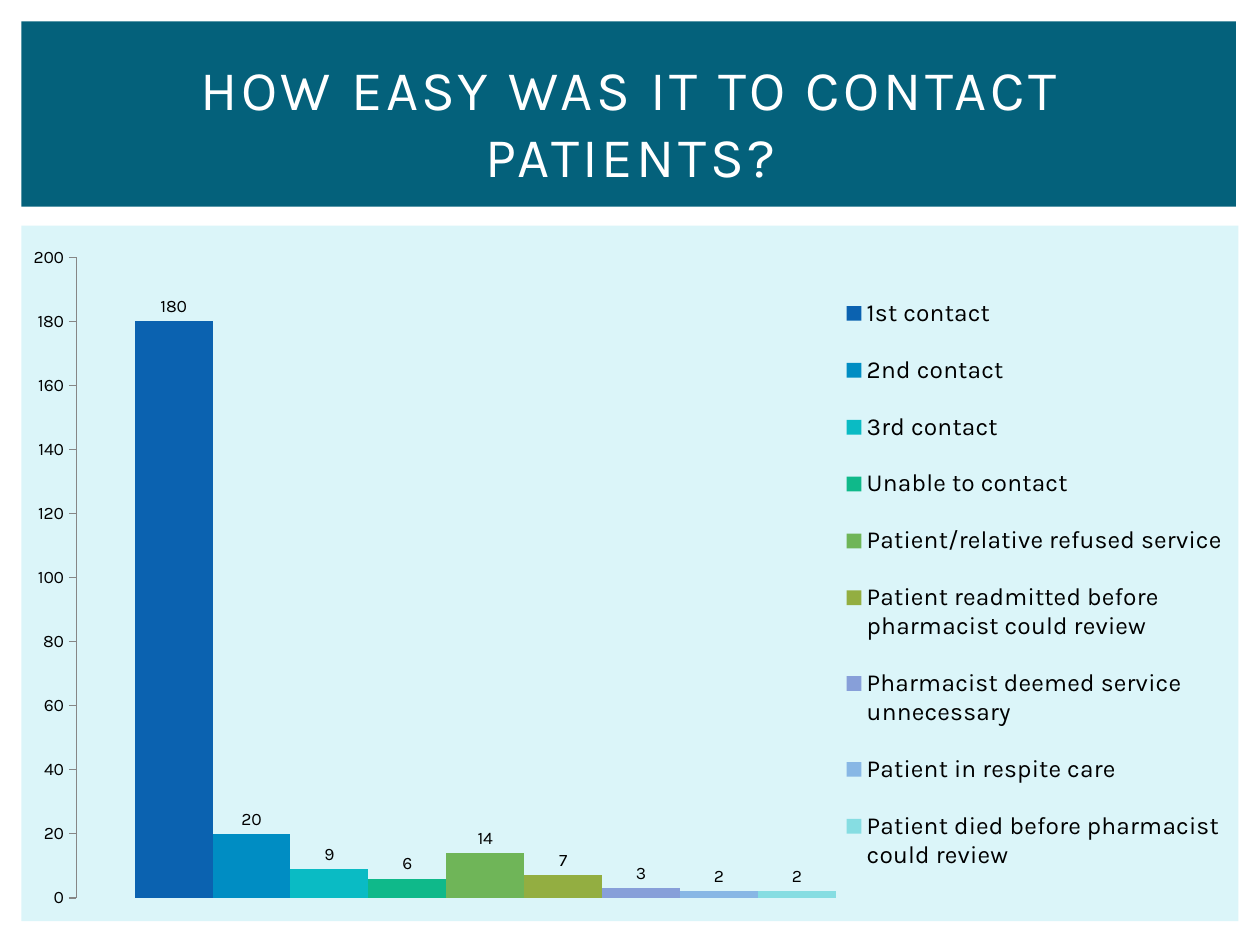
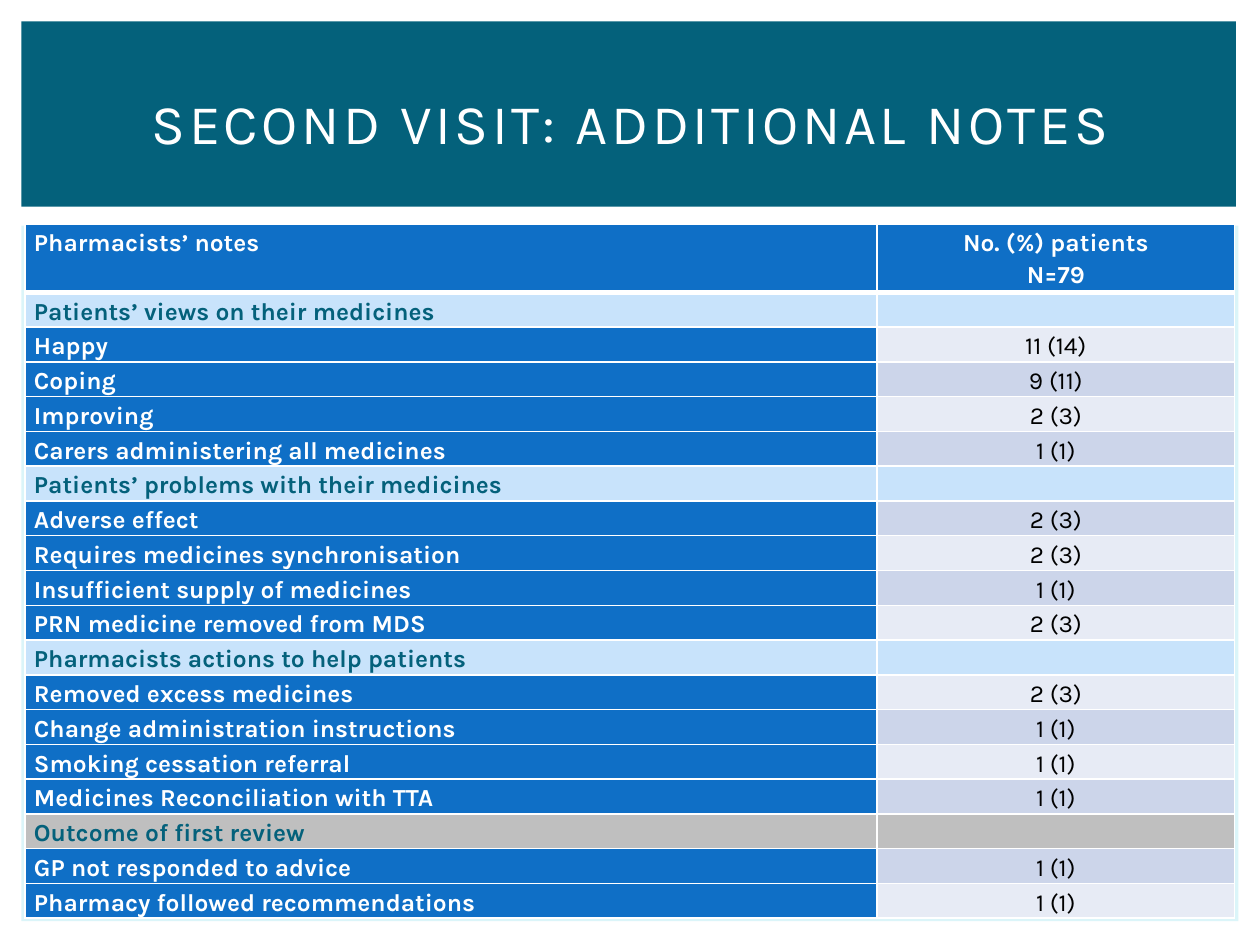
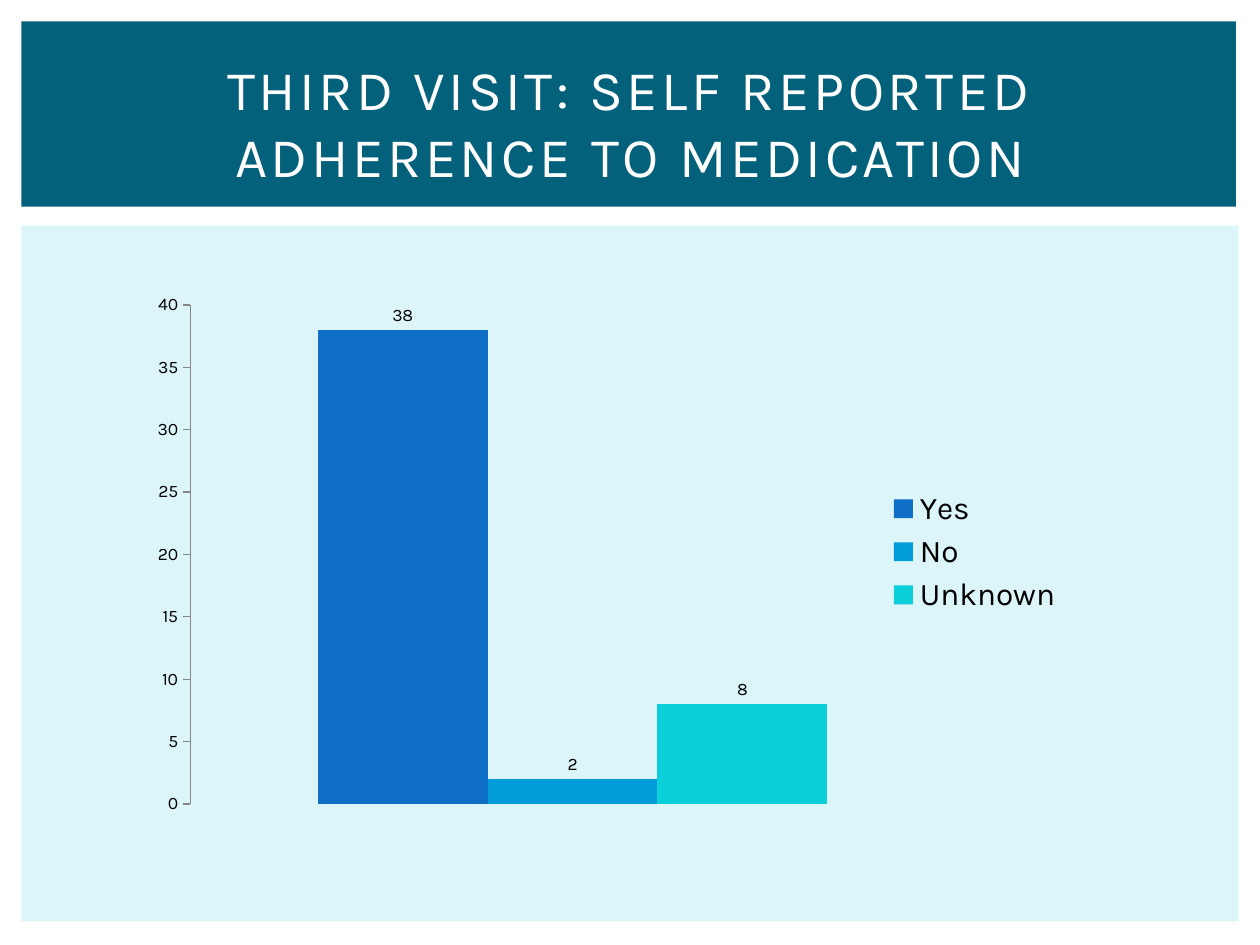
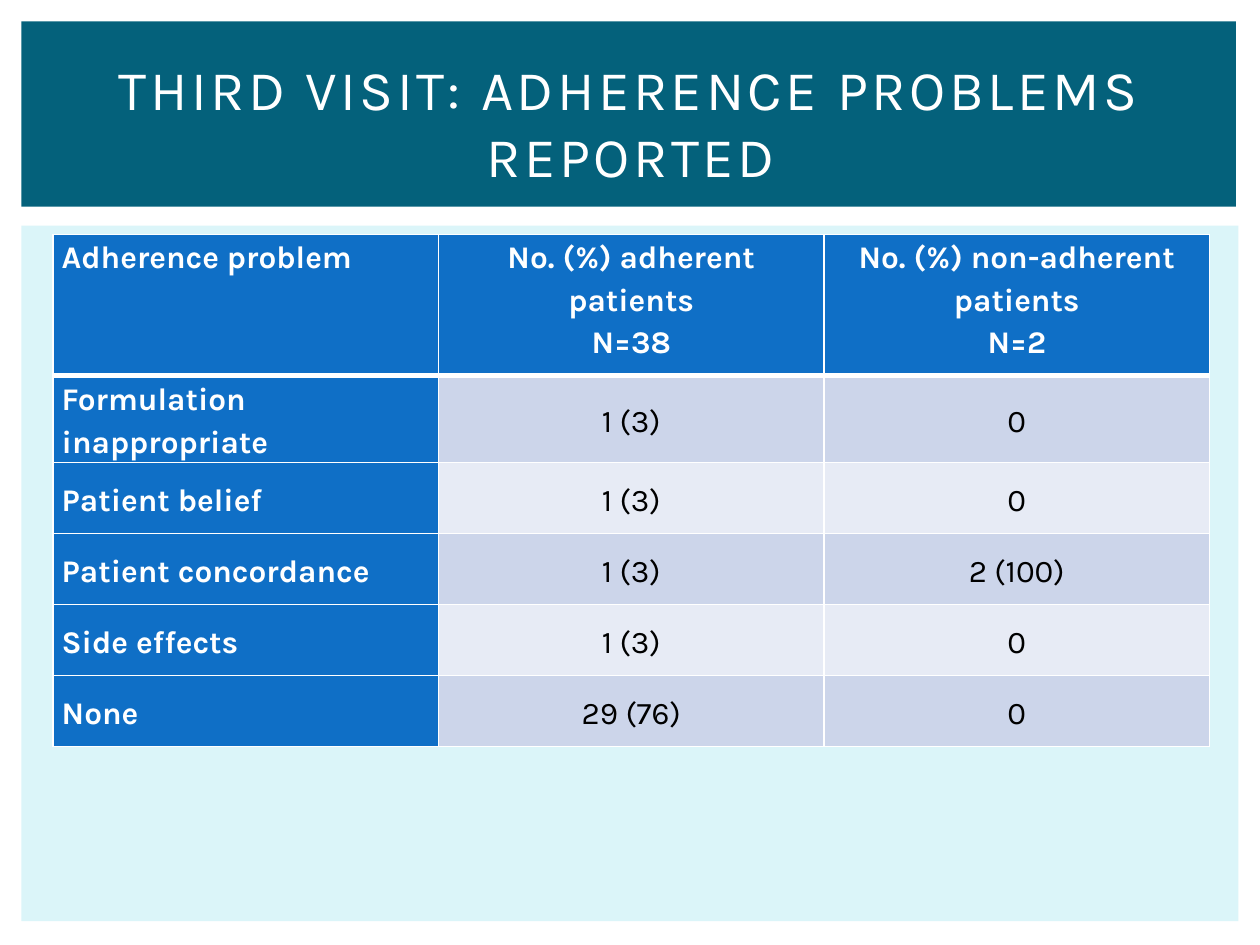
from lxml.etree import SubElement as Sub
from pptx import Presentation
from pptx.chart.data import CategoryChartData as Data
from pptx.dml.color import RGBColor as Rgb
from pptx.enum.chart import XL_CHART_TYPE as Kind
from pptx.enum.chart import XL_LABEL_POSITION as Spot
from pptx.enum.chart import XL_LEGEND_POSITION as Side
from pptx.enum.chart import XL_TICK_MARK as Tick
from pptx.enum.shapes import MSO_SHAPE as Shape
from pptx.enum.text import MSO_ANCHOR as Anchor
from pptx.enum.text import PP_ALIGN as Align
from pptx.oxml import parse_xml
from pptx.oxml.ns import nsdecls, qn
from pptx.util import Inches, Pt

FACE = "Karla"
HUES = {
    "white": "FFFFFF",
    "black": "000000",
    "teal": "04617B",
    "pale": "DBF5F9",
    "blue": "0F6FC6",
    "sky": "009DD9",
    "aqua": "0BD0D9",
    "light": "C8E3FB",
    "grey": "BFBFBF",
    "odd": "CCD5EA",
    "even": "E7EBF5",
    "axis": "868686",
    "bar1": "0B62B0",
    "bar2": "008DC3",
    "bar3": "0ABBC4",
    "bar4": "0FB98A",
    "bar5": "6FB558",
    "bar6": "93AE41",
    "bar7": "879FD9",
    "bar8": "88B7E5",
    "bar9": "86DDE2",
}
CELL = {
    "margin_left": Inches(0.07),
    "margin_right": Inches(0.07),
    "margin_top": 0,
    "margin_bottom": 0,
}


def put(item, vals):
    for name, val in vals.items():
        setattr(item, name, val)


def hue(name):
    return Rgb.from_string(HUES[name])


def paint(item, name):
    item.fill.solid()
    item.fill.fore_color.rgb = hue(name)


def style(font, size, tone="black", bold=False):
    put(font, {"name": FACE, "size": Pt(size), "bold": bold})
    font.color.rgb = hue(tone)


def layout(box, inner=False):
    target = '<c:layoutTarget val="inner"/>' if inner else ""
    modes = "".join(f'<c:{k}Mode val="edge"/>' for k in "xy")
    sizes = "".join(f'<c:{k} val="{v}"/>' for k, v in zip("xywh", box))
    return parse_xml(
        f'<c:layout {nsdecls("c")}><c:manualLayout>{target}{modes}{sizes}'
        "</c:manualLayout></c:layout>"
    )


class Deck:
    def __init__(self):
        self.prs = Presentation()
        put(self.prs, {"slide_width": Inches(10), "slide_height": Inches(7.5)})
        self.slide = None

    def page(self, title):
        self.slide = self.prs.slides.add_slide(self.prs.slide_layouts[6])
        self.rect((0.17, 1.79, 9.66, 5.52), "pale")
        self.rect((0.17, 0.17, 9.64, 1.47), "teal")
        self.title(title)

    def rect(self, box, tone):
        shape = self.slide.shapes.add_shape(Shape.RECTANGLE, *map(Inches, box))
        shape.shadow.inherit = False
        paint(shape, tone)
        shape.line.fill.background()

    def title(self, text):
        box = map(Inches, (0.42, 0.39, 9.17, 1.15))
        frame = self.slide.shapes.add_textbox(*box).text_frame
        put(frame, {"word_wrap": True, "vertical_anchor": Anchor.MIDDLE})
        para = frame.paragraphs[0]
        para.alignment = Align.CENTER
        run = para.add_run()
        run.text = text
        style(run.font, 32, "white")
        run.font._element.set("spc", "200")

    def chart(self, box, bars, top, step, plot, size, key=None):
        data = Data()
        data.categories = ["1"]
        for name, val, _ in bars:
            data.add_series(name, [val])
        kind = Kind.COLUMN_CLUSTERED
        frame = self.slide.shapes.add_chart(kind, *map(Inches, box), data)
        chart = frame.chart
        put(chart, {"has_title": False, "has_legend": True})
        style(chart.font, 10)
        self.axes(chart, top, step)
        self.bars(chart.plots[0], bars)
        area = chart._chartSpace.chart.plotArea
        for old in area.findall(qn("c:layout")):
            area.remove(old)
        area.insert(0, layout(plot, True))
        legend = chart.legend
        put(legend, {"position": Side.RIGHT, "include_in_layout": False})
        style(legend.font, size)
        if key:
            node = legend._element
            for old in node.findall(qn("c:layout")):
                node.remove(old)
            node.find(qn("c:legendPos")).addnext(layout(key))

    def axes(self, chart, top, step):
        chart.category_axis.visible = False
        axis = chart.value_axis
        put(axis, {
            "minimum_scale": 0,
            "maximum_scale": top,
            "major_unit": step,
            "has_major_gridlines": False,
            "major_tick_mark": Tick.OUTSIDE,
            "minor_tick_mark": Tick.NONE,
        })
        axis.format.line.color.rgb = hue("axis")
        axis.format.line.width = Pt(0.75)

    def bars(self, plot, bars):
        put(plot, {"gap_width": 150, "overlap": 0, "vary_by_categories": False})
        for series, (_, _, tone) in zip(plot.series, bars):
            paint(series.format, tone)
            labels = series.data_labels
            put(labels, {"show_value": True, "position": Spot.OUTSIDE_END})
            style(labels.font, 10)

    def table(self, box, cols, head, rows, size, heads=None):
        lines = [head, *rows]
        dims = map(Inches, box)
        frame = self.slide.shapes.add_table(len(lines), len(cols), *dims)
        table = frame.table
        put(table, {"first_row": True, "horz_banding": False})
        for col, wide in zip(table.columns, cols):
            col.width = Inches(wide)
        rest = (box[3] - heads) / len(rows)
        for i, line in enumerate(lines):
            table.rows[i].height = Inches(rest if i else heads)
            band = line[1] if line[1] in HUES else None
            for j, text in enumerate(line):
                main = i == 0 or j == 0
                fill = band or ("blue" if main else "odd" if i % 2 else "even")
                tone = "teal" if band else "white" if main else "black"
                cell = table.cell(i, j)
                put(cell, CELL)
                cell.vertical_anchor = Anchor.MIDDLE if i else Anchor.TOP
                self.words(cell, "" if band and j else text, size, tone, main, j)
                paint(cell, fill)
                self.edges(cell, 3 if i == 1 else 1, 1 if i else 3)

    def words(self, cell, text, size, tone, bold, col):
        frame = cell.text_frame
        for k, part in enumerate(text.split("\n")):
            para = frame.add_paragraph() if k else frame.paragraphs[0]
            side = Align.CENTER if col else Align.LEFT
            put(para, {"alignment": side, "line_spacing": 1.15})
            if part:
                run = para.add_run()
                run.text = part
                style(run.font, size, tone, bold)
            else:
                Sub(para._p, qn("a:endParaRPr"), sz=str(size * 100))

    def edges(self, cell, top, low):
        props = cell._tc.get_or_add_tcPr()
        for k, (side, wide) in enumerate(zip("LRTB", (1, 1, top, low))):
            line = parse_xml(
                f'<a:ln{side} {nsdecls("a")} w="{Pt(wide)}"><a:solidFill>'
                f'<a:srgbClr val="{HUES["white"]}"/></a:solidFill></a:ln{side}>'
            )
            props.insert(k, line)


def main():
    deck = Deck()

    deck.page("HOW EASY WAS IT TO CONTACT PATIENTS?")
    calls = [
        ("1st contact", 180),
        ("2nd contact", 20),
        ("3rd contact", 9),
        ("Unable to contact", 6),
        ("Patient/relative refused service", 14),
        ("Patient readmitted before pharmacist could review", 7),
        ("Pharmacist deemed service unnecessary", 3),
        ("Patient in respite care", 2),
        ("Patient died before pharmacist could review", 2),
    ]
    bars = [(name, val, f"bar{k}") for k, (name, val) in enumerate(calls, 1)]
    deck.chart((0.12, 1.88, 9.69, 5.41), bars, 200, 20,
               (0.05, 0.03, 0.67, 0.94), 14, (0.67, 0.05, 0.33, 0.92))

    deck.page("SECOND VISIT: ADDITIONAL NOTES")
    notes = [
        ("Patients’ views on their medicines", "light"),
        ("Happy", "11 (14)"),
        ("Coping", "9 (11)"),
        ("Improving", "2 (3)"),
        ("Carers administering all medicines", "1 (1)"),
        ("Patients’ problems with their medicines", "light"),
        ("Adverse effect", "2 (3)"),
        ("Requires medicines synchronisation", "2 (3)"),
        ("Insufficient supply of medicines", "1 (1)"),
        ("PRN medicine removed from MDS", "2 (3)"),
        ("Pharmacists actions to help patients", "light"),
        ("Removed excess medicines", "2 (3)"),
        ("Change administration instructions", "1 (1)"),
        ("Smoking cessation referral", "1 (1)"),
        ("Medicines Reconciliation with TTA", "1 (1)"),
        ("Outcome of first review", "grey"),
        ("GP not responded to advice", "1 (1)"),
        ("Pharmacy followed recommendations", "1 (1)"),
    ]
    deck.table((0.2, 1.78, 9.6, 5.51), (6.76, 2.84),
               ("Pharmacists’ notes", "No. (%) patients\nN=79"),
               notes, 14, 0.54)

    deck.page("THIRD VISIT: SELF REPORTED ADHERENCE TO MEDICATION")
    bars = [("Yes", 38, "blue"), ("No", 2, "sky"), ("Unknown", 8, "aqua")]
    deck.chart((1.14, 2.25, 7.4, 4.26), bars, 40, 5,
               (0.05, 0.04, 0.82, 0.93), 18)

    deck.page("THIRD VISIT: ADHERENCE PROBLEMS REPORTED")
    faults = [
        ("Formulation inappropriate", "1 (3)", "0"),
        ("Patient belief", "1 (3)", "0"),
        ("Patient concordance", "1 (3)", "2 (100)"),
        ("Side effects", "1 (3)", "0"),
        ("None", "29 (76)", "0"),
    ]
    deck.table((0.42, 1.86, 9.19, 3.94), (3.06,) * 3,
               ("Adherence problem", "No. (%) adherent patients\nN=38",
                "No. (%) non-adherent patients\nN=2"),
               faults, 18, 1.12)

    deck.prs.save("out.pptx")


if __name__ == "__main__":
    main()
